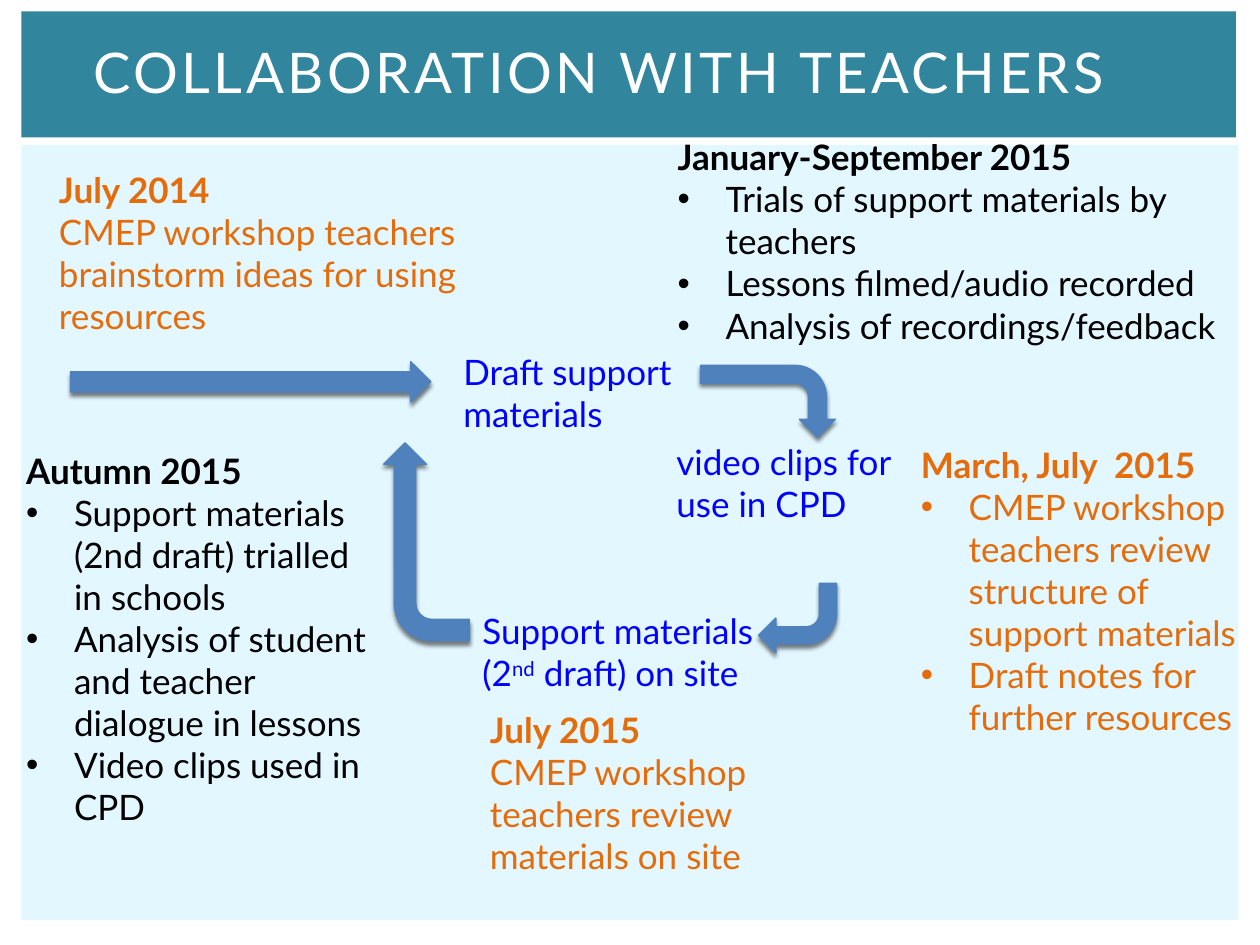
from lxml import etree
from pptx import Presentation
from pptx.dml.color import RGBColor
from pptx.enum.shapes import MSO_SHAPE
from pptx.enum.text import MSO_ANCHOR, PP_ALIGN
from pptx.oxml.ns import qn
from pptx.util import Inches, Pt

RECT = MSO_SHAPE.RECTANGLE
RIGHT = MSO_SHAPE.RIGHT_ARROW
BENT = MSO_SHAPE.BENT_ARROW
MIDDLE = MSO_ANCHOR.MIDDLE
TOP = MSO_ANCHOR.TOP
CENTER = PP_ALIGN.CENTER
LEFT = PP_ALIGN.LEFT

COLORS = {
    "panel": "E2F7FF", "banner": "31859C", "white": "FFFFFF",
    "orange": "E46C0A", "blue": "0000FF", "black": "000000", "arrow": "4F81BD",
}
FONT = "Lato"

STAGES = [
    {
        "box": (0.37, 1.29, 5.24, 2.21),
        "note": ((0, 0, 3.43, 1.45), "orange", "July 2014",
                 ["CMEP workshop teachers brainstorm ideas for using resources"], False),
        "arrow": ((0.19, 1.58, 2.86, 0.32), RIGHT, 0),
        "output": ((3.21, 1.44, 2.03, 0.77), ["Draft support materials"]),
    },
    {
        "box": (5.27, 1.03, 4.5, 3.19),
        "note": ((0.01, 0, 4.49, 1.66), "black", "January-September 2015",
                 ["Trials of support materials by teachers",
                  "Lessons filmed/audio recorded",
                  "Analysis of recordings/feedback"], True),
        "arrow": ((0.54, 1.62, 0.57, 1.07), BENT, 90),
        "output": ((0, 2.42, 1.94, 0.77), ["video clips for use in CPD"]),
    },
    {
        "box": (7.21, 3.47, 2.79, 2.46),
        "note": ((0, 0, 2.79, 2.46), "orange", "March, July  2015",
                 ["CMEP workshop teachers review structure of support materials",
                  "Draft notes for further resources"], True),
    },
    {
        "box": (3.73, 4.63, 2.91, 2.39),
        "note": ((0.06, 0.94, 2.64, 1.45), "orange", "July 2015",
                 ["CMEP workshop teachers review materials on site"], False),
        "arrow": ((2.29, 0, 0.62, 0.55), BENT, 180),
        "output": ((0, 0.16, 2.49, 0.77),
                   ["Support materials (2", "nd", " draft) on site"]),
    },
    {
        "box": (0.11, 3.52, 4.06, 3.13),
        "note": ((0, 0, 3.04, 3.13), "black", "Autumn 2015",
                 ["Support materials (2nd draft) trialled in schools",
                  "Analysis of student and teacher dialogue in lessons",
                  "Video clips used in CPD"], True),
        "arrow": ((2.49, 0.44, 1.57, 0.68), BENT, 270),
    },
]


def inside(box, part):
    """Return a part's slide position from its place within a box."""
    return (box[0] + part[0], box[1] + part[1], part[2], part[3])


def add_block(slide, box, shape, color):
    """Add a filled shape without line or shadow."""
    sp = slide.shapes.add_shape(shape, *map(Inches, box))
    sp.shadow.inherit = False
    sp.fill.solid()
    sp.fill.fore_color.rgb = RGBColor.from_string(COLORS[color])
    sp.line.fill.background()
    return sp


def add_arrow(slide, box, shape, rotation):
    """Add a cycle arrow with an outline and a soft drop shadow."""
    sp = add_block(slide, box, shape, "arrow")
    sp.rotation = rotation
    sp.line.color.rgb = RGBColor.from_string(COLORS["arrow"])
    sp.line.width = Pt(0.79)
    effects = sp._element.spPr.find(qn("a:effectLst"))
    shadow = etree.SubElement(effects, qn("a:outerShdw"), blurRad=str(Pt(2.5)),
                              dist=str(Pt(2)), dir="5400000", rotWithShape="0")
    color = etree.SubElement(shadow, qn("a:srgbClr"), val=COLORS["black"])
    etree.SubElement(color, qn("a:alpha"), val="50000")


def add_bullet(p):
    """Give a paragraph a round bullet with a hanging indent."""
    pPr = p._p.get_or_add_pPr()
    pPr.set("marL", str(Inches(0.38)))
    pPr.set("indent", str(-Inches(0.38)))
    etree.SubElement(pPr, qn("a:buFont"), typeface="Arial")
    etree.SubElement(pPr, qn("a:buChar"), char="•")


def add_run(p, text, size=20, color="black", bold=False, spacing=0, baseline=0):
    """Add a formatted run to a paragraph."""
    r = p.add_run()
    r.text = text
    r.font.name = FONT
    r.font.size = Pt(size)
    r.font.bold = bold
    r.font.color.rgb = RGBColor.from_string(COLORS[color])
    rPr = r._r.get_or_add_rPr()
    if spacing:
        rPr.set("spc", str(spacing * 100))
    if baseline:
        rPr.set("baseline", str(baseline * 1000))


def add_frame(slide, box, anchor=TOP):
    """Add a wrapping text box and return its text frame."""
    tf = slide.shapes.add_textbox(*map(Inches, box)).text_frame
    tf.word_wrap = True
    tf.vertical_anchor = anchor
    return tf


def add_note(slide, box, color, heading, lines, bulleted):
    """Add a dated note with a bold heading and its lines."""
    tf = add_frame(slide, box)
    add_run(tf.paragraphs[0], heading, color=color, bold=True)
    for line in lines:
        p = tf.add_paragraph()
        p.alignment = LEFT
        if bulleted:
            add_bullet(p)
        add_run(p, line, color=color)


def add_output(slide, box, parts):
    """Add the material a stage produces, raising every second part."""
    p = add_frame(slide, box).paragraphs[0]
    for i, part in enumerate(parts):
        add_run(p, part, color="blue", baseline=30 * (i % 2))


def add_header(slide, box):
    """Add the banner and the slide title."""
    add_block(slide, box, RECT, "banner")
    tf = add_frame(slide, inside(box, (0, -0.1, 9.17, 1.15)), MIDDLE)
    p = tf.paragraphs[0]
    p.alignment = CENTER
    add_run(p, "COLLABORATION WITH TEACHERS", size=32, color="white", spacing=2)


def add_stage(slide, box, note, arrow=None, output=None):
    """Add one stage of the cycle: its note, arrow and output."""
    for add_part, part in ((add_note, note), (add_arrow, arrow), (add_output, output)):
        if part:
            add_part(slide, inside(box, part[0]), *part[1:])


def main():
    """Build and save the slide."""
    prs = Presentation()
    prs.slide_width, prs.slide_height = Inches(10), Inches(7.5)
    slide = prs.slides.add_slide(prs.slide_layouts[6])
    add_block(slide, (0.17, 1.15, 9.66, 6.15), RECT, "panel")
    add_header(slide, (0.17, 0.09, 9.64, 1))
    for stage in STAGES:
        add_stage(slide, **stage)
    prs.save("out.pptx")


if __name__ == "__main__":
    main()
